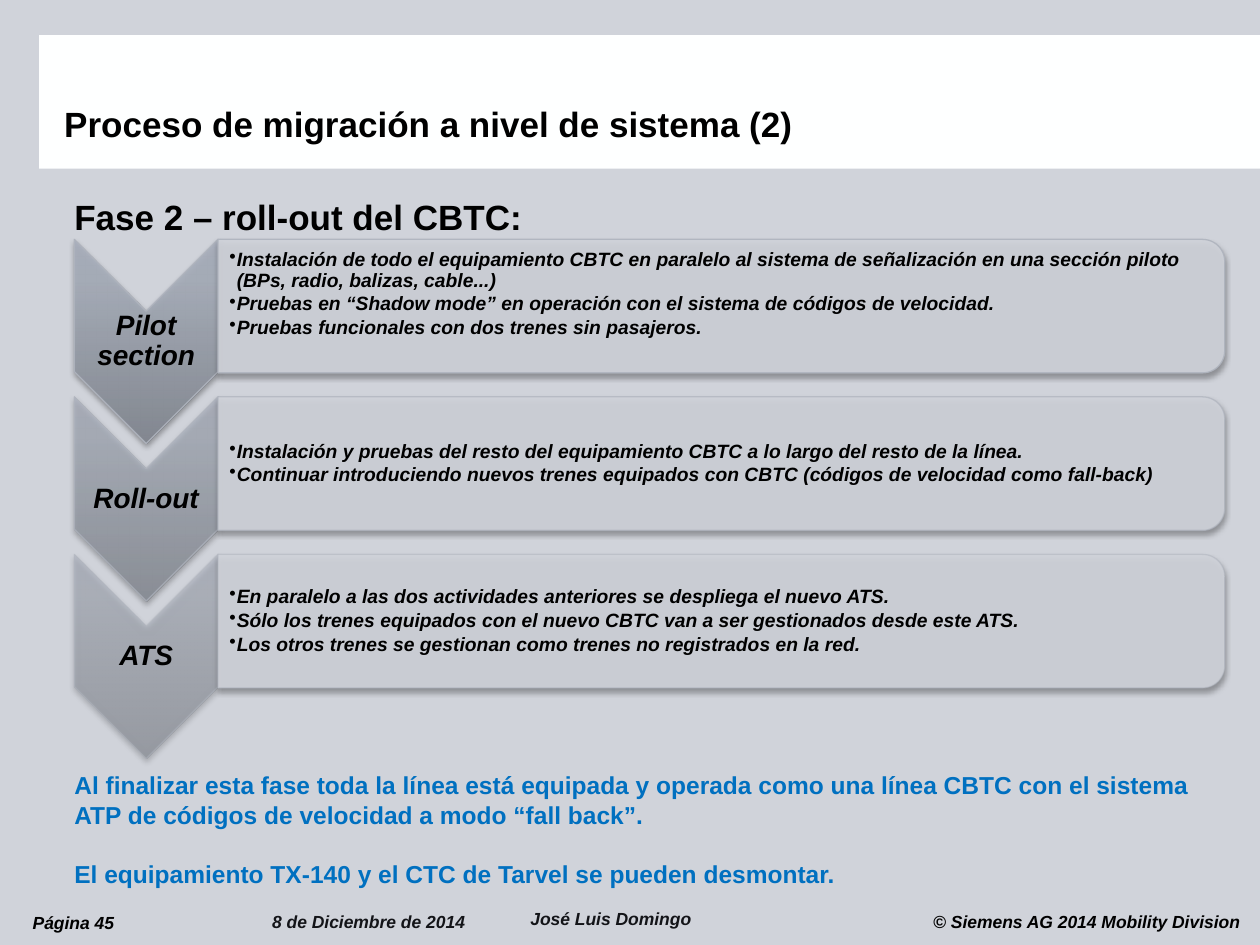
import copy

import pptx
import pptx.dml.color
import pptx.enum.shapes
import pptx.enum.text
import pptx.oxml
import pptx.oxml.ns
import pptx.util

RGBColor = pptx.dml.color.RGBColor
BACKGROUND = RGBColor(0xD0, 0xD3, 0xDA)
BANNER = RGBColor(0xFE, 0xFF, 0xFF)
BLACK = RGBColor(0, 0, 0)
FOOTER = RGBColor(0x13, 0x14, 0x18)
BLUE = RGBColor(0x00, 0x70, 0xC0)
OUTLINE = RGBColor(0xAF, 0xB4, 0xBE)
GRADIENT = [
    (0, RGBColor(0x81, 0x86, 0x8F)),
    (0.8, RGBColor(0xA7, 0xAE, 0xBA)),
    (1, RGBColor(0xA8, 0xAE, 0xBC)),
]

CELL = pptx.util.Inches(0.1)
FIRST_ROW, ROW_STEP = 19, 12.5
MARGIN, PANEL_LEFT = 5.9, 17.3
ARROW_COLS, ARROW_ROWS = 11.4, 16.2
PANEL_COLS, PANEL_ROWS = 79.9, 10.6
TEXT_INSET = 0.5

PHASES = [
    ("Pilot section", 90, 2, [
        "Instalación de todo el equipamiento CBTC en paralelo al sistema de señalización en una sección piloto (BPs, radio, balizas, cable...)",
        "Pruebas en “Shadow mode” en operación con el sistema de códigos de velocidad.",
        "Pruebas funcionales con dos trenes sin pasajeros.",
    ]),
    ("Roll-out", 70, 0.1, [
        "Instalación y pruebas del resto del equipamiento CBTC a lo largo del resto de la línea.",
        "Continuar introduciendo nuevos trenes equipados con CBTC (códigos de velocidad como fall-back)",
    ]),
    ("ATS", 50, 0.1, [
        "En paralelo a las dos actividades anteriores se despliega el nuevo ATS.",
        "Sólo los trenes equipados con el nuevo CBTC van a ser gestionados desde este ATS.",
        "Los otros trenes se gestionan como trenes no registrados en la red.",
    ]),
]
CONCLUSION = [
    "Al finalizar esta fase toda la línea está equipada y operada como una línea CBTC con el sistema ATP de códigos de velocidad a modo “fall back”.",
    "El equipamiento TX-140 y el CTC de Tarvel se pueden desmontar.",
]


def grid(*cells):
    return [round(cell * CELL) for cell in cells]


def add_bullet(para):
    properties = para._p.get_or_add_pPr()
    properties.set("marL", str(pptx.util.Inches(0.06)))
    properties.set("indent", str(-pptx.util.Inches(0.06)))
    properties.append(pptx.oxml.parse_xml(
        f'<a:buChar {pptx.oxml.ns.nsdecls("a")} char="•"/>'))


def add_text(page, place, *texts, size=10, color=BLACK, italic=False,
             align="LEFT", anchor="TOP", insets=(0, 0, 0, 0), spacing=1.0,
             gap=0, bullets=False):
    box = page.shapes.add_textbox(*grid(*place))
    frame = box.text_frame
    frame.word_wrap = True
    frame.vertical_anchor = getattr(pptx.enum.text.MSO_ANCHOR, anchor)
    (frame.margin_left, frame.margin_top,
     frame.margin_right, frame.margin_bottom) = grid(*insets)
    for index, text in enumerate(texts):
        para = frame.paragraphs[0] if index == 0 else frame.add_paragraph()
        para.alignment = getattr(pptx.enum.text.PP_ALIGN, align)
        para.line_spacing = spacing
        if index:
            para.space_before = pptx.util.Pt(gap)
        if bullets:
            add_bullet(para)
        span = para.add_run()
        span.text = text
        span.font.name = "Arial"
        span.font.size = pptx.util.Pt(size)
        span.font.bold = True
        span.font.italic = italic
        span.font.color.rgb = color
    return box


def add_turned_shape(page, kind, left, top, cols, rows):
    middle, center = left + cols / 2, top + rows / 2
    shape = page.shapes.add_shape(
        kind, *grid(middle - rows / 2, center - cols / 2, rows, cols))
    shape.rotation = 90
    return shape


def fill_gradient(shape):
    shape.fill.gradient()
    shape.fill.gradient_angle = 180
    stops = shape._element.spPr.find(".//" + pptx.oxml.ns.qn("a:gsLst"))
    stops.append(copy.deepcopy(stops[-1]))
    for stop, (position, color) in zip(shape.fill.gradient_stops, GRADIENT):
        stop.position = position
        stop.color.rgb = color


def fill_solid(shape, color):
    shape.fill.solid()
    shape.fill.fore_color.rgb = color


def set_opacity(element, percent):
    for color in element.iter(pptx.oxml.ns.qn("a:srgbClr")):
        color.append(pptx.oxml.parse_xml(
            f'<a:alpha {pptx.oxml.ns.nsdecls("a")} val="{percent * 1000}"/>'))


def finish_shape(shape, fill_opacity, line_opacity):
    properties = shape._element.spPr
    set_opacity(properties, fill_opacity)
    shape.line.color.rgb = OUTLINE
    shape.line.width = pptx.util.Pt(0.75)
    set_opacity(properties.find(pptx.oxml.ns.qn("a:ln")), line_opacity)
    shape.shadow.inherit = False
    effects = properties.find(pptx.oxml.ns.qn("a:effectLst"))
    effects.append(pptx.oxml.parse_xml(
        f'<a:outerShdw {pptx.oxml.ns.nsdecls("a")} blurRad="40000" '
        'dist="23000" dir="5400000" rotWithShape="0"><a:srgbClr val="000000">'
        '<a:alpha val="35000"/></a:srgbClr></a:outerShdw>'))


def add_phase(page, top, label, opacity, bottom_inset, points):
    kinds = pptx.enum.shapes.MSO_SHAPE
    arrow = add_turned_shape(page, kinds.CHEVRON, MARGIN, top,
                             ARROW_COLS, ARROW_ROWS)
    fill_gradient(arrow)
    finish_shape(arrow, opacity, opacity)
    add_text(page, (MARGIN, top + ARROW_COLS / 2, ARROW_COLS,
                    ARROW_ROWS - ARROW_COLS), label,
             size=16, italic=True, align="CENTER", anchor="MIDDLE",
             insets=(0.1, 0.1, 0.1, 0.1), spacing=0.9)
    panel = add_turned_shape(page, kinds.ROUND_2_SAME_RECTANGLE, PANEL_LEFT,
                             top, PANEL_COLS, PANEL_ROWS)
    fill_solid(panel, BACKGROUND)
    finish_shape(panel, 90, opacity)
    add_text(page, (PANEL_LEFT, top + TEXT_INSET, PANEL_COLS - TEXT_INSET,
                    PANEL_ROWS - 2 * TEXT_INSET), *points,
             size=11, italic=True, anchor="MIDDLE", spacing=0.9, gap=1.65,
             insets=(0.9, 0.1, 0.1, bottom_inset), bullets=True)


def add_banner(page):
    banner = page.shapes.add_shape(
        pptx.enum.shapes.MSO_SHAPE.RECTANGLE, *grid(3.1, 2.8, 96.9, 10.6))
    fill_solid(banner, BANNER)
    banner.line.fill.background()
    banner.shadow.inherit = False
    add_text(page, (5.1, 7.6, 62.6, 3.9),
             "Proceso de migración a nivel de sistema (2)",
             size=20, anchor="BOTTOM", spacing=pptx.util.Pt(24))


def add_footer(page):
    add_text(page, (39.9, 71, 58.5, 3), "© Siemens AG 2014 Mobility Division",
             italic=True, align="RIGHT", anchor="BOTTOM")
    add_text(page, (2.6, 72.2, 10, 2), "Página 45", italic=True, spacing=1.1)
    add_text(page, (21.6, 72.3, 17, 1.7), "8 de Diciembre de 2014",
             color=FOOTER, italic=True, anchor="BOTTOM")
    add_text(page, (42.1, 70.8, 14.4, 2.9), "José Luis Domingo",
             color=FOOTER, italic=True, anchor="BOTTOM")


def main():
    deck = pptx.Presentation()
    deck.slide_width, deck.slide_height = grid(100, 75)
    page = deck.slides.add_slide(deck.slide_layouts[6])
    page.background.fill.solid()
    page.background.fill.fore_color.rgb = BACKGROUND
    add_banner(page)
    add_footer(page)
    add_text(page, (MARGIN, 15.5, 91.3, 3.4), "Fase 2 – roll-out del CBTC:",
             size=20, spacing=pptx.util.Pt(24))
    for index, phase in enumerate(PHASES):
        add_phase(page, FIRST_ROW + index * ROW_STEP, *phase)
    add_text(page, (MARGIN, 61.1, 91.3, 9.6), *CONCLUSION, size=14,
             color=BLUE, spacing=pptx.util.Pt(17), gap=17)
    deck.save("out.pptx")


if __name__ == "__main__":
    main()
